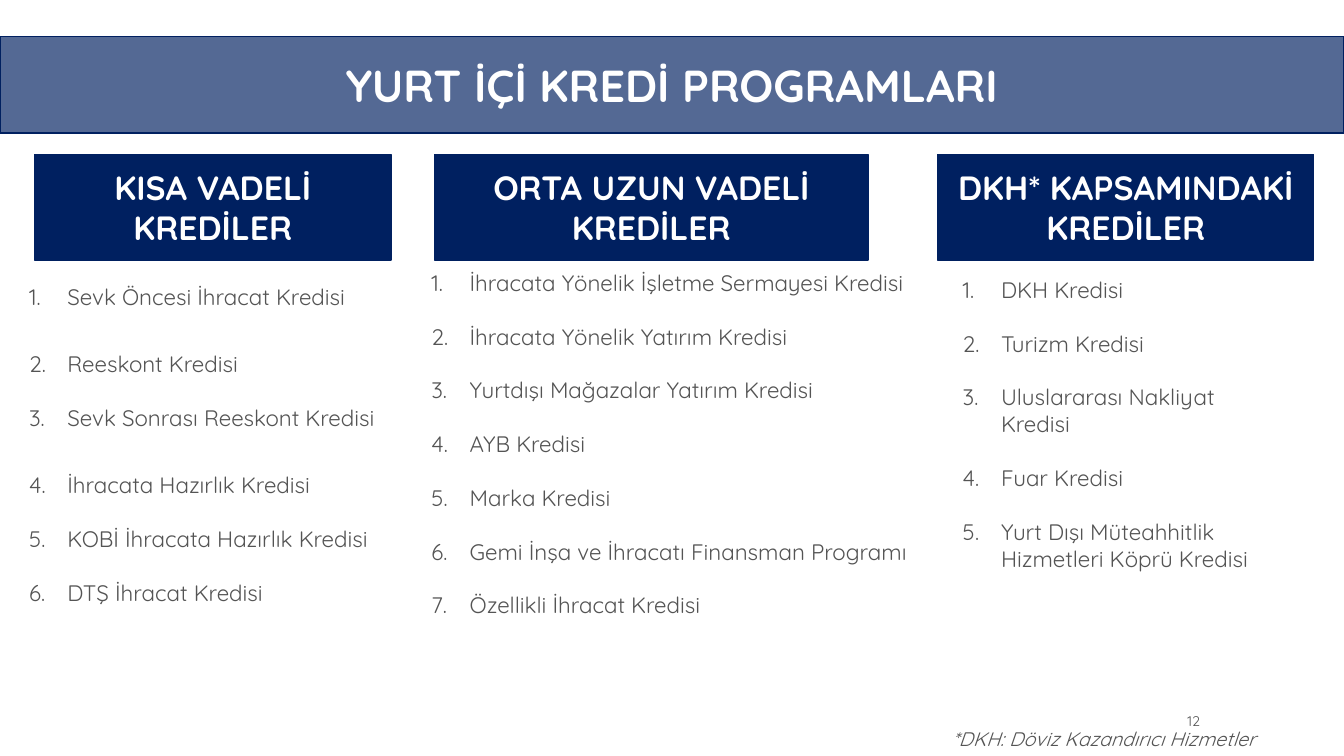
from lxml.etree import SubElement
from pptx import Presentation
from pptx.dml.color import RGBColor
from pptx.enum.shapes import MSO_SHAPE
from pptx.enum.text import MSO_ANCHOR, PP_ALIGN
from pptx.oxml.ns import qn
from pptx.util import Emu, Pt

PX = 9144
NAVY, GREY, WHITE = "002060", "545454", "FFFFFF"


def paint(hue):
    return RGBColor.from_string(hue)


def style(par, size, hue, bold=False, slant=False):
    for run in par.runs:
        font = run.font
        font.name = "Quicksand"
        font.size = Pt(size)
        font.bold = bold
        font.italic = slant
        font.color.rgb = paint(hue)


deck = Presentation()
deck.slide_width = Emu(1333 * PX)
deck.slide_height = Emu(750 * PX)
slide = deck.slides.add_slide(deck.slide_layouts[6])
shapes = slide.shapes

lists = [
    ((19, 276, 369, 333), [
        "Sevk Öncesi İhracat Kredisi",
        "Reeskont Kredisi",
        "Sevk Sonrası Reeskont Kredisi",
        "İhracata Hazırlık Kredisi",
        "KOBİ İhracata Hazırlık Kredisi",
        "DTŞ İhracat Kredisi",
    ], (1, 3)),
    ((418, 262, 498, 441), [
        "İhracata Yönelik İşletme Sermayesi Kredisi",
        "İhracata Yönelik Yatırım Kredisi",
        "Yurtdışı Mağazalar Yatırım Kredisi",
        "AYB Kredisi",
        "Marka Kredisi",
        "Gemi İnşa ve İhracatı Finansman Programı",
        "Özellikli İhracat Kredisi",
    ], ()),
    ((945, 269, 319, 360), [
        "DKH Kredisi",
        "Turizm Kredisi",
        "Uluslararası Nakliyat Kredisi",
        "Fuar Kredisi",
        "Yurt Dışı Müteahhitlik Hizmetleri Köprü Kredisi",
    ], ()),
]
for area, items, wide in lists:
    frame = shapes.add_textbox(*[Emu(n * PX) for n in area]).text_frame
    frame.word_wrap = True
    for row, item in enumerate(items):
        par = frame.add_paragraph() if row else frame.paragraphs[0]
        par.text = item
        if row:
            par.space_before = Pt(28.8 if row in wide else 19.2)
        props = par._p.get_or_add_pPr()
        props.set("marL", str(38 * PX))
        props.set("indent", str(-38 * PX))
        face = SubElement(props, qn("a:buFont"))
        face.set("typeface", "+mj-lt")
        SubElement(props, qn("a:buAutoNum")).set("type", "arabicPeriod")
        style(par, 16, GREY)

bars = [
    ((0, 36, 1333, 96), "YURT İÇİ KREDİ PROGRAMLARI", 32),
    ((34, 153, 354, 105), "KISA VADELİ KREDİLER", 24),
    ((431, 153, 430, 105), "ORTA UZUN VADELİ KREDİLER", 24),
    ((930, 153, 373, 105), "DKH* KAPSAMINDAKİ KREDİLER", 24),
]
for area, text, size in bars:
    bar = shapes.add_shape(MSO_SHAPE.RECTANGLE, *[Emu(n * PX) for n in area])
    bar.shadow.inherit = False
    bar.fill.solid()
    bar.fill.fore_color.rgb = paint(NAVY)
    bar.line.color.rgb = paint(NAVY)
    bar.line.width = Pt(1)
    if size == 32:
        tint = bar.fill._xPr.find(qn("a:solidFill"))[0]
        SubElement(tint, qn("a:alpha")).set("val", "67000")
    frame = bar.text_frame
    frame.word_wrap = True
    frame.vertical_anchor = MSO_ANCHOR.MIDDLE
    frame.text = text
    par = frame.paragraphs[0]
    par.alignment = PP_ALIGN.CENTER
    style(par, size, WHITE, bold=True)

note = shapes.add_textbox(*[Emu(n * PX) for n in (935, 716, 329, 34)]).text_frame
note.word_wrap = False
note.text = "*DKH: Döviz Kazandırıcı Hizmetler"
style(note.paragraphs[0], 14, GREY, slant=True)

page = shapes.add_textbox(*[Emu(n * PX) for n in (1075, 705, 125, 20)]).text_frame
page.word_wrap = True
page.vertical_anchor = MSO_ANCHOR.MIDDLE
page.text = "12"
page.paragraphs[0].alignment = PP_ALIGN.RIGHT
style(page.paragraphs[0], 10, GREY)

deck.save("out.pptx")
